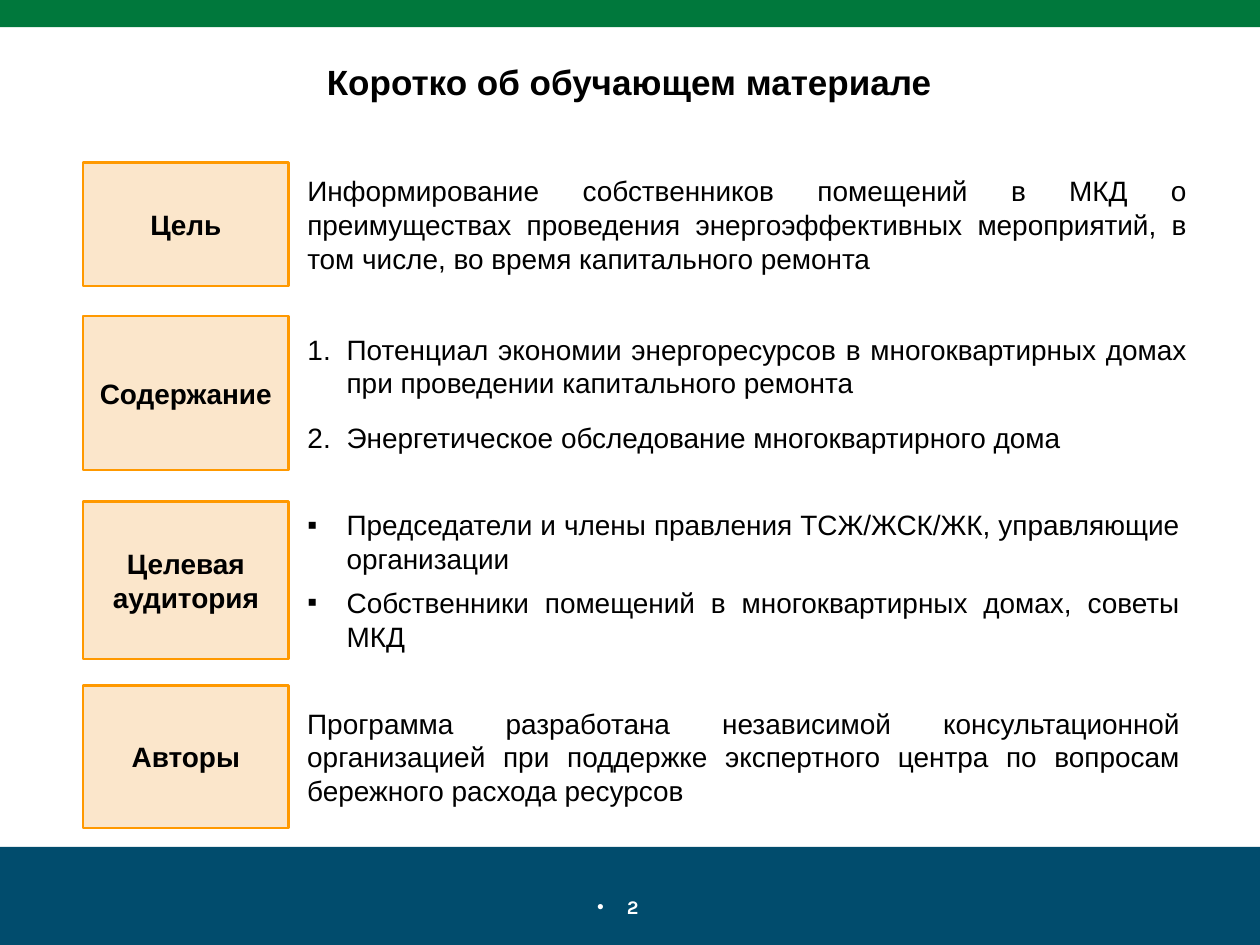
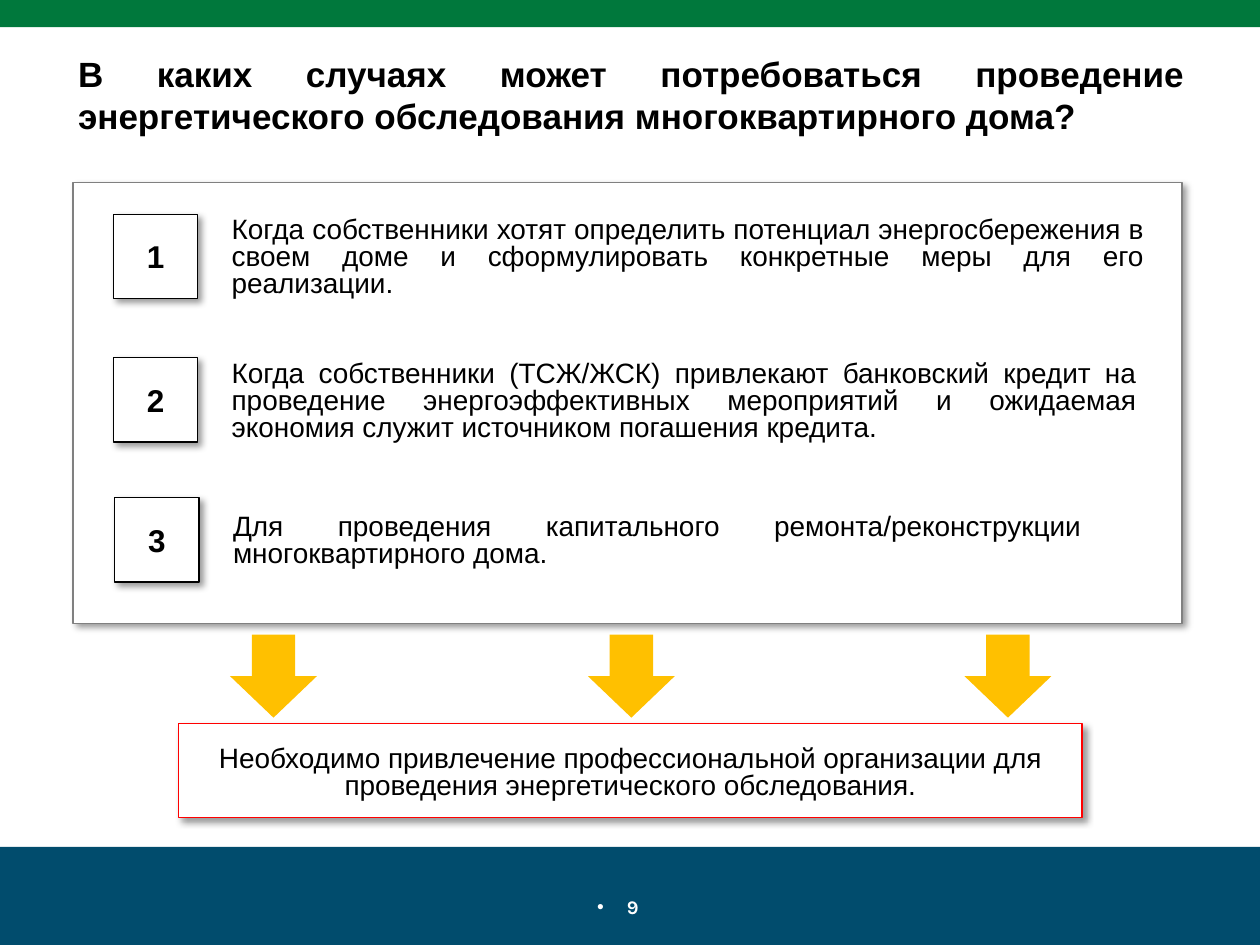
from lxml import etree
from pptx import Presentation
from pptx.dml.color import RGBColor
from pptx.enum.shapes import MSO_SHAPE
from pptx.enum.text import MSO_ANCHOR, MSO_AUTO_SIZE, PP_ALIGN
from pptx.oxml.ns import qn
from pptx.util import Pt

# Shared look
GREEN = RGBColor(0x00, 0x78, 0x3C)
NAVY = RGBColor(0x01, 0x4C, 0x6D)
WHITE = RGBColor(0xFF, 0xFF, 0xFF)
BLACK = RGBColor(0x00, 0x00, 0x00)
GRAY = RGBColor(0x80, 0x80, 0x80)
RED = RGBColor(0xFF, 0x00, 0x00)
PEACH = RGBColor(0xFB, 0xE6, 0xCB)
ORANGE = RGBColor(0xFF, 0x99, 0x00)
AMBER = RGBColor(0xFF, 0xC0, 0x00)

RECTANGLE = MSO_SHAPE.RECTANGLE
RIGHT_ARROW = MSO_SHAPE.RIGHT_ARROW
TOP, MIDDLE = MSO_ANCHOR.TOP, MSO_ANCHOR.MIDDLE
NO_AUTOFIT = MSO_AUTO_SIZE.NONE
CENTER, JUSTIFY = PP_ALIGN.CENTER, PP_ALIGN.JUSTIFY

TEXT_FONT, NUMBER_FONT = "Arial", "Karla"
WIDTH, HEIGHT = 720, 540
TWO_CONTENT, TITLE_ONLY = 3, 5

# Slide 1: label, top, height, text width, bullet, gap, paragraphs
SUMMARY_ROWS = [
    ("Цель", 92.9, 70.6, 517, None, 0,
     ["Информирование собственников помещений в МКД о преимуществах проведения "
      "энергоэффективных мероприятий, в том числе, во время капитального ремонта"]),
    ("Содержание", 180.7, 87.8, 517, "1.", 12,
     ["Потенциал экономии энергоресурсов в многоквартирных домах при проведении "
      "капитального ремонта",
      "Энергетическое обследование многоквартирного дома"]),
    ("Целевая аудитория", 286.6, 90, 513, "▪", 6,
     ["Председатели и члены правления ТСЖ/ЖСК/ЖК, управляющие организации",
      "Собственники помещений в многоквартирных домах, советы МКД"]),
    ("Авторы", 391.7, 81.4, 513, None, 0,
     ["Программа разработана независимой консультационной организацией при "
      "поддержке экспертного центра по вопросам бережного расхода ресурсов"]),
]

# Slide 2: left and top within the panel, text width, text
CASES = [
    (23, 18, 535.7, "Когда собственники хотят определить потенциал энергосбережения в своем "
     "доме и сформулировать конкретные меры для его реализации."),
    (23, 100, 531.4, "Когда собственники (ТСЖ/ЖСК) привлекают банковский кредит на проведение "
     "энергоэффективных мероприятий и ожидаемая экономия служит источником погашения "
     "кредита."),
    (23.8, 180, 499, "Для проведения капитального ремонта/реконструкции "
     "многоквартирного дома."),
]
ARROW_LEFTS = [132.5, 337, 552.2]


def place(shape, left, top, width, height):
    shape.left, shape.top = Pt(left), Pt(top)
    shape.width, shape.height = Pt(width), Pt(height)


def add_bullet(paragraph, bullet, indent):
    properties = paragraph._p.get_or_add_pPr()
    properties.set("marL", str(Pt(indent)))
    properties.set("indent", str(-Pt(indent)))
    if bullet is None:
        etree.SubElement(properties, qn("a:buNone"))
    elif bullet == "1.":
        etree.SubElement(properties, qn("a:buAutoNum"), type="arabicPeriod")
    else:
        etree.SubElement(properties, qn("a:buFont"), typeface=TEXT_FONT)
        etree.SubElement(properties, qn("a:buChar"), char=bullet)


def write(shape, texts, size=16, bold=False, color=BLACK, font=TEXT_FONT, align=CENTER,
          anchor=MIDDLE, bullet=None, indent=0, gap=0, spacing=1.0):
    frame = shape.text_frame
    frame.word_wrap = True
    frame.auto_size = NO_AUTOFIT
    frame.vertical_anchor = anchor
    for index, text in enumerate(texts):
        paragraph = frame.add_paragraph() if index else frame.paragraphs[0]
        paragraph.text = text
        add_bullet(paragraph, bullet, indent)
        paragraph.alignment = align
        paragraph.line_spacing = spacing
        paragraph.space_before = Pt(gap if index else 0)
        paragraph.space_after = Pt(0)
        paragraph.font.name = font
        paragraph.font.size = Pt(size)
        paragraph.font.bold = bold
        paragraph.font.color.rgb = color


def add_box(slide, left, top, width, height, fill, line=None, line_width=0.75,
            preset=RECTANGLE):
    shape = slide.shapes.add_shape(preset, Pt(left), Pt(top), Pt(width), Pt(height))
    shape.shadow.inherit = False
    shape.fill.solid()
    shape.fill.fore_color.rgb = fill
    if line is None:
        shape.line.fill.background()
    else:
        shape.line.color.rgb = line
        shape.line.width = Pt(line_width)
    return shape


def add_shadowed_box(slide, left, top, width, height, line):
    shape = add_box(slide, left, top, width, height, WHITE, line)
    effects = shape._element.spPr.find(qn("a:effectLst"))
    shadow = etree.SubElement(effects, qn("a:outerShdw"), blurRad=str(Pt(4)),
                              dist=str(Pt(3)), dir="2700000", algn="tl", rotWithShape="0")
    color = etree.SubElement(shadow, qn("a:srgbClr"), val=str(BLACK))
    etree.SubElement(color, qn("a:alpha"), val="40000")
    return shape


def add_text(slide, left, top, width, height, texts, **style):
    box = slide.shapes.add_textbox(Pt(left), Pt(top), Pt(width), Pt(height))
    write(box, texts, **style)


def start_slide(presentation, layout, number, title, title_box, title_align):
    """Bands, slide number and title, the same on every slide."""
    slide = presentation.slides.add_slide(presentation.slide_layouts[layout])
    add_box(slide, 0, 484, WIDTH, 56, NAVY)
    add_box(slide, 0, 0, WIDTH, 15.6, GREEN)
    add_text(slide, 279, 507, 148, 22, [number], size=11, bold=True, color=WHITE,
             font=NUMBER_FONT, bullet="•", indent=17)
    place(slide.shapes.title, *title_box)
    write(slide.shapes.title, [title], size=20, bold=True, align=title_align, anchor=TOP)
    return slide


def add_summary_row(slide, row, list_placeholders):
    label, top, height, text_width, bullet, gap, texts = row
    label_box = add_box(slide, 47.5, top, 117.4, height, PEACH, ORANGE, 1.25)
    label_box.text_frame.margin_left = label_box.text_frame.margin_right = Pt(3.6)
    write(label_box, [label], bold=True)
    text_box = (168.5, top, text_width, height)
    if bullet:
        placeholder = next(list_placeholders)
        place(placeholder, *text_box)
        write(placeholder, texts, align=JUSTIFY, bullet=bullet, indent=22.4, gap=gap)
    else:
        add_text(slide, *text_box, texts, align=JUSTIFY)


def build_summary_slide(presentation):
    slide = start_slide(presentation, TWO_CONTENT, "2", "Коротко об обучающем материале",
                        (51.8, 31, 615.6, 31.7), CENTER)
    list_placeholders = iter([slide.placeholders[1], slide.placeholders[2]])
    for row in SUMMARY_ROWS:
        add_summary_row(slide, row, list_placeholders)


def add_cases_panel(slide, left, top, width, height):
    add_shadowed_box(slide, left, top, width, height, GRAY)
    for number, (case_left, case_top, text_width, text) in enumerate(CASES, 1):
        box_left, box_top = left + case_left, top + case_top
        number_box = add_shadowed_box(slide, box_left, box_top, 48.2, 48.2, BLACK)
        write(number_box, [str(number)], size=18, bold=True)
        add_text(slide, box_left + 60.5, box_top - 1.5, text_width, 54, [text],
                 align=JUSTIFY, spacing=0.8)


def add_conclusion(slide, left, top, width, height):
    for arrow_left in ARROW_LEFTS:
        arrow = add_box(slide, arrow_left, top - 51.8, 47.5, 49.7, AMBER,
                        preset=RIGHT_ARROW)
        arrow.rotation = 90
    box = add_shadowed_box(slide, left, top, width, height, RED)
    box.text_frame.margin_left = box.text_frame.margin_right = Pt(16)
    box.text_frame.margin_top = Pt(8)
    write(box, ["Необходимо привлечение профессиональной организации для проведения "
                "энергетического обследования."], spacing=0.8)


def build_cases_slide(presentation):
    slide = start_slide(presentation, TITLE_ONLY, "9",
                        "В каких случаях может потребоваться проведение энергетического "
                        "обследования многоквартирного дома?",
                        (37.4, 26.6, 646.6, 55.4), JUSTIFY)
    add_cases_panel(slide, 41.8, 104.4, 633.6, 252)
    add_conclusion(slide, 102.2, 413.3, 516.2, 54)


def main():
    presentation = Presentation()
    presentation.slide_width, presentation.slide_height = Pt(WIDTH), Pt(HEIGHT)
    build_summary_slide(presentation)
    build_cases_slide(presentation)
    presentation.save("out.pptx")


if __name__ == "__main__":
    main()
